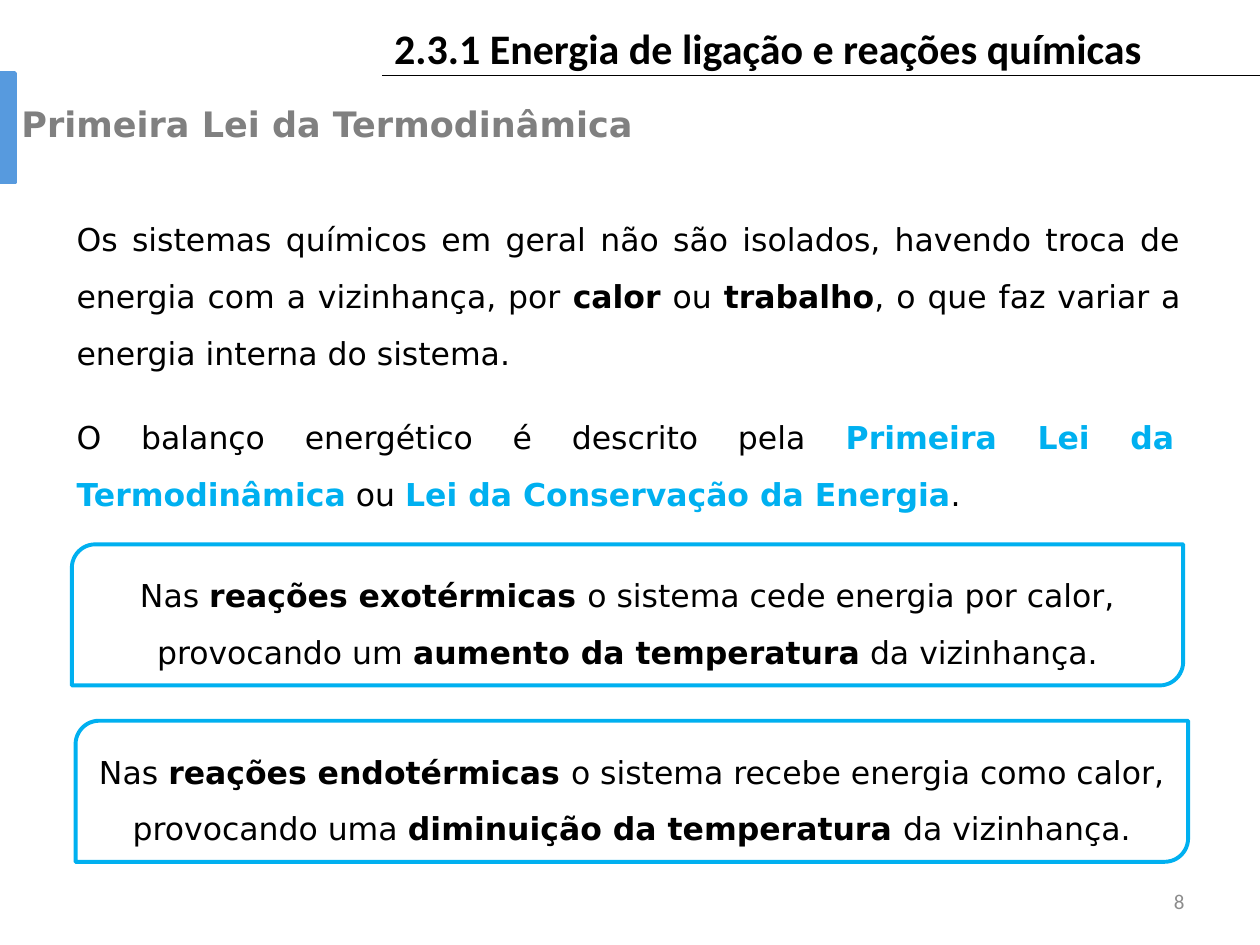
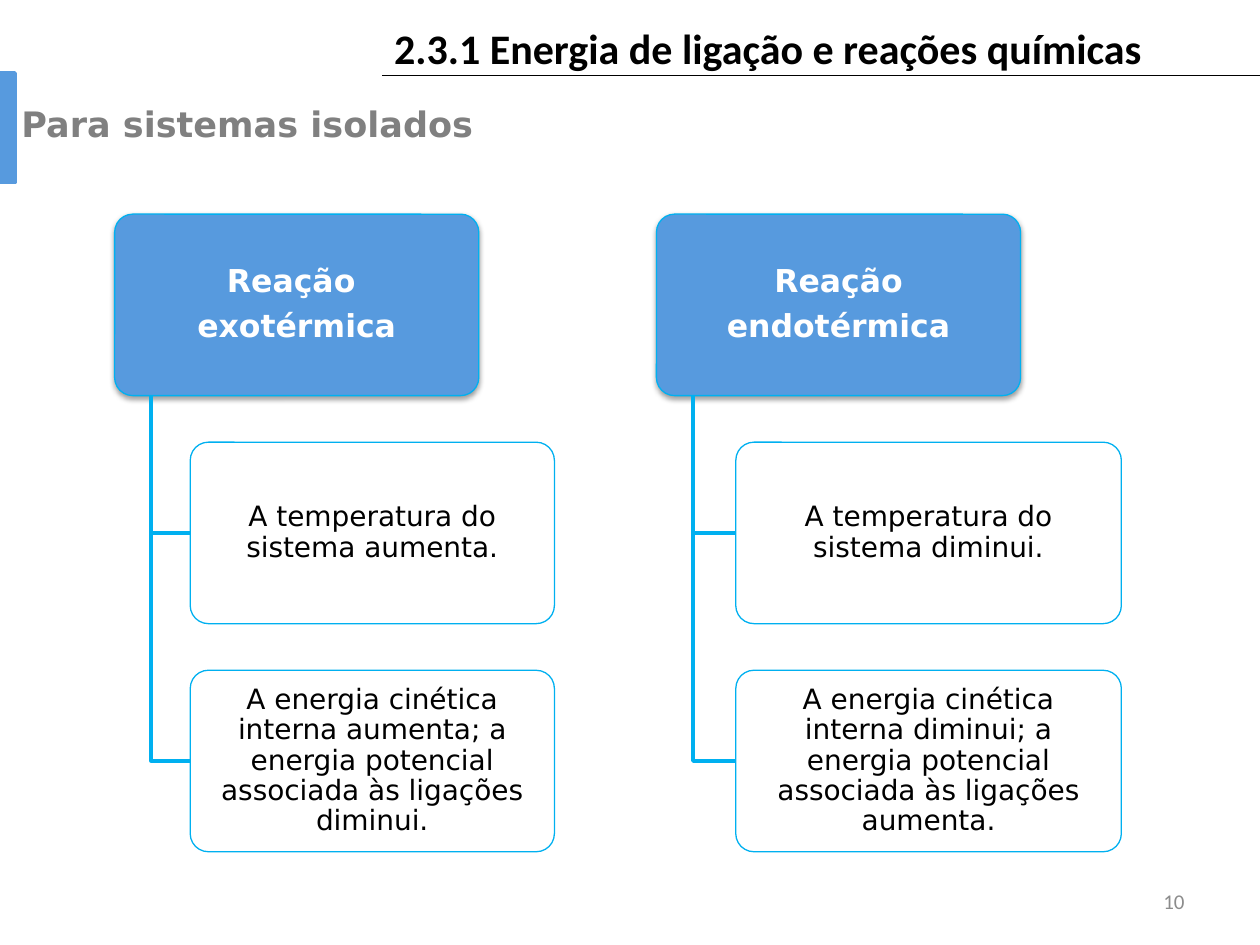
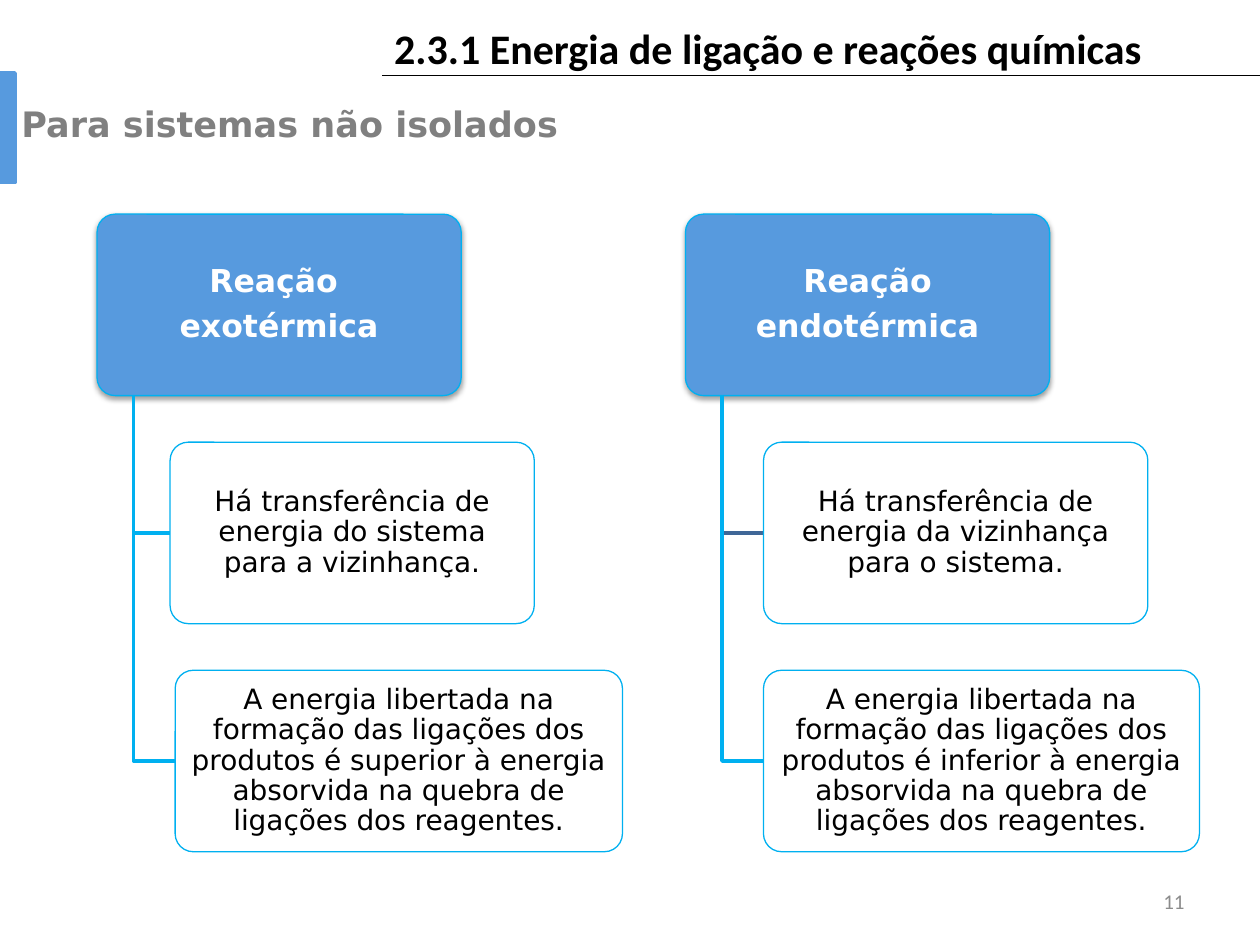
from pptx import Presentation
from pptx.dml.color import RGBColor
from pptx.enum.shapes import MSO_CONNECTOR, MSO_SHAPE
from pptx.enum.text import MSO_ANCHOR, MSO_AUTO_SIZE, PP_ALIGN
from pptx.oxml import parse_xml
from pptx.oxml.ns import nsdecls
from pptx.util import Inches, Pt

LEFT, CENTER, RIGHT, JUSTIFY = (
    PP_ALIGN.LEFT, PP_ALIGN.CENTER, PP_ALIGN.RIGHT, PP_ALIGN.JUSTIFY)
TOP, MIDDLE = MSO_ANCHOR.TOP, MSO_ANCHOR.MIDDLE
ROUNDED, DIAGONAL = MSO_SHAPE.ROUNDED_RECTANGLE, MSO_SHAPE.ROUND_2_DIAG_RECTANGLE

COLORS = {
    "black": "000000",
    "white": "FFFFFF",
    "blue": "579ADE",
    "cyan": "00B0F0",
    "navy": "3F6797",
    "heading": "808080",
    "number": "8C8C8C",
}
HEADER_FONT, BODY_FONT = "Calibri", "DejaVu Sans"
SECTION = "2.3.1 Energia de ligação e reações químicas"

# Reaction trees: rows share one height and one pitch
TREE_TOP, ROW_PITCH, NODE_HEIGHT = 1.7, 1.81, 1.44
HEAD_WIDTH, TRUNK_INDENT = 2.89, 0.29


def color(name):
    return RGBColor.from_string(COLORS[name])


def set_font(font, size, name=BODY_FONT, fill="black", bold=False):
    font.name, font.size, font.bold = name, Pt(size), bold
    font.color.rgb = color(fill)


def set_frame(tf, anchor=TOP):
    tf.word_wrap = True
    tf.auto_size = MSO_AUTO_SIZE.NONE
    tf.vertical_anchor = anchor


def place(sp, box):
    sp.left, sp.top, sp.width, sp.height = map(Inches, box)


def add_text(slide, box, anchor=TOP):
    tf = slide.shapes.add_textbox(*map(Inches, box)).text_frame
    set_frame(tf, anchor)
    return tf


def add_box(slide, kind, box, fill, line, width):
    sp = slide.shapes.add_shape(kind, *map(Inches, box))
    sp.shadow.inherit = False
    if fill:
        sp.fill.solid()
        sp.fill.fore_color.rgb = color(fill)
    else:
        sp.fill.background()
    sp.line.color.rgb = color(line)
    sp.line.width = Pt(width)
    return sp


def write_rich(p, parts, align):
    """Fill p with strings, or (text, colour) pairs for bold words."""
    p.alignment = align
    p.line_spacing = 1.5
    for part in parts:
        bold = isinstance(part, tuple)
        text, fill = part if bold else (part, "black")
        r = p.add_run()
        r.text = text
        set_font(r.font, 18, fill=fill, bold=bold)


def add_paragraph_box(slide, box, parts):
    write_rich(add_text(slide, box).paragraphs[0], parts, JUSTIFY)


def add_callout(slide, box, parts):
    sp = add_box(slide, DIAGONAL, box, None, "cyan", 2.25)
    set_frame(sp.text_frame)
    write_rich(sp.text_frame.paragraphs[0], parts, CENTER)


def add_slide(prs, title, number):
    """Add a slide with the section header, side bar, title and page number."""
    slide = prs.slides.add_slide(prs.slide_layouts[5])
    rule = slide.shapes.add_connector(
        MSO_CONNECTOR.STRAIGHT, Inches(10), Inches(0.6), Inches(3.03), Inches(0.6))
    rule.line.color.rgb = color("black")
    rule.line.width = Pt(0.75)
    rule._element.spPr.append(parse_xml(f"<a:effectLst {nsdecls('a')}/>"))

    p = add_text(slide, (3.03, 0.13, 6.19, 0.5)).paragraphs[0]
    p.text = SECTION
    set_font(p.font, 24, HEADER_FONT, bold=True)

    add_box(slide, MSO_SHAPE.RECTANGLE, (-0.01, 0.58, 0.13, 0.87), "blue", "blue", 2)

    p = add_text(slide, (7.17, 6.95, 2.33, 0.4), MIDDLE).paragraphs[0]
    p.text = str(number)
    p.alignment = RIGHT
    set_font(p.font, 12, HEADER_FONT, "number")

    place(slide.shapes.title, (0.07, 0.76, 6.38, 0.49))
    tf = slide.shapes.title.text_frame
    set_frame(tf)
    p = tf.paragraphs[0]
    p.text = title
    p.alignment = LEFT
    set_font(p.font, 20, fill="heading", bold=True)
    return slide


def add_node(slide, box, lines, size, fill, text_fill, bold=False):
    sp = add_box(slide, ROUNDED, box, fill, "cyan", 0.75)
    sp.adjustments[0] = 0.1
    tf = sp.text_frame
    set_frame(tf, MIDDLE)
    tf.margin_left = tf.margin_right = Inches(0.07)
    tf.margin_top = tf.margin_bottom = Inches(0.06)
    for i, line in enumerate(lines):
        p = tf.add_paragraph() if i else tf.paragraphs[0]
        p.text = line
        p.alignment = CENTER
        p.line_spacing = 0.9
        p.space_after = Pt(0.35 * size)
        set_font(p.font, size, fill=text_fill, bold=bold)
    return sp


def add_soft_shadow(sp):
    effects = sp._element.spPr.find(
        "{http://schemas.openxmlformats.org/drawingml/2006/main}effectLst")
    effects.append(parse_xml(
        f'<a:outerShdw {nsdecls("a")} blurRad="{Pt(3.1)}" dist="{Pt(1.6)}" '
        'dir="5400000" rotWithShape="0"><a:srgbClr val="000000">'
        '<a:alpha val="38000"/></a:srgbClr></a:outerShdw>'))


def add_branch(slide, trunk, top, end, line):
    """Draw an elbow from the trunk's top down and right to end (x, y)."""
    builder = slide.shapes.build_freeform(Inches(trunk), Inches(top))
    x, y = map(Inches, end)
    builder.add_line_segments([(Inches(trunk), y), (x, y)], close=False)
    sp = builder.convert_to_shape()
    sp.shadow.inherit = False
    sp.fill.background()
    sp.line.color.rgb = color(line)
    sp.line.width = Pt(2)


def add_tree(slide, left, heading, nodes):
    """Draw a heading with nodes (left, width, text, branch colour) below it."""
    head = add_node(slide, (left, TREE_TOP, HEAD_WIDTH, NODE_HEIGHT),
                    heading, 18, "blue", "white", bold=True)
    add_soft_shadow(head)
    for row, (x, width, text, line) in enumerate(nodes, 1):
        top = TREE_TOP + row * ROW_PITCH
        add_branch(slide, left + TRUNK_INDENT, TREE_TOP + NODE_HEIGHT,
                   (x, top + NODE_HEIGHT / 2), line)
        add_node(slide, (x, top, width, NODE_HEIGHT), [text], 16, "white", "black")


def add_first_law(prs):
    slide = add_slide(prs, "Primeira Lei da Termodinâmica", 8)
    add_paragraph_box(slide, (0.51, 1.55, 8.96, 1.61), [
        "Os sistemas químicos em geral não são isolados, havendo troca de energia "
        "com a vizinhança, por ", ("calor", "black"), " ou ", ("trabalho", "black"),
        ", o que faz variar a energia interna do sistema."])
    add_paragraph_box(slide, (0.51, 3.12, 8.91, 0.95), [
        "O balanço energético é descrito pela ",
        ("Primeira Lei da Termodinâmica", "cyan"), " ou ",
        ("Lei da Conservação da Energia", "cyan"), "."])
    add_callout(slide, (0.57, 4.32, 8.82, 1.12), [
        "Nas ", ("reações exotérmicas ", "black"),
        "o sistema cede energia por calor, provocando um ",
        ("aumento da temperatura", "black"), " da vizinhança."])
    add_callout(slide, (0.6, 5.72, 8.83, 1.12), [
        "Nas ", ("reações endotérmicas ", "black"),
        "o sistema recebe energia como calor, provocando uma ",
        ("diminuição da temperatura ", "black"), "da vizinhança."])


def main():
    prs = Presentation()
    prs.slide_width, prs.slide_height = Inches(10), Inches(7.5)
    exothermic = ["Reação ", "exotérmica"]
    endothermic = ["Reação", "endotérmica"]

    add_first_law(prs)

    slide = add_slide(prs, "Para sistemas isolados", 10)
    add_tree(slide, 0.91, exothermic, [
        (1.51, 2.89, "A temperatura do sistema aumenta.", "cyan"),
        (1.51, 2.89, "A energia cinética interna aumenta; a energia potencial "
                     "associada às ligações diminui.", "cyan")])
    add_tree(slide, 5.21, endothermic, [
        (5.84, 3.06, "A temperatura do sistema diminui.", "cyan"),
        (5.84, 3.06, "A energia cinética interna diminui; a energia potencial "
                     "associada às ligações aumenta.", "cyan")])

    slide = add_slide(prs, "Para sistemas não isolados", 11)
    energy = ("A energia libertada na formação das ligações dos produtos é {} à "
              "energia absorvida na quebra de ligações dos reagentes.")
    add_tree(slide, 0.77, exothermic, [
        (1.35, 2.89, "Há transferência de energia do sistema para a vizinhança.",
         "cyan"),
        (1.39, 3.55, energy.format("superior"), "cyan")])
    add_tree(slide, 5.44, endothermic, [
        (6.06, 3.05, "Há transferência de energia da vizinhança para o sistema.",
         "navy"),
        (6.06, 3.46, energy.format("inferior"), "cyan")])

    prs.save("out.pptx")


if __name__ == "__main__":
    main()
